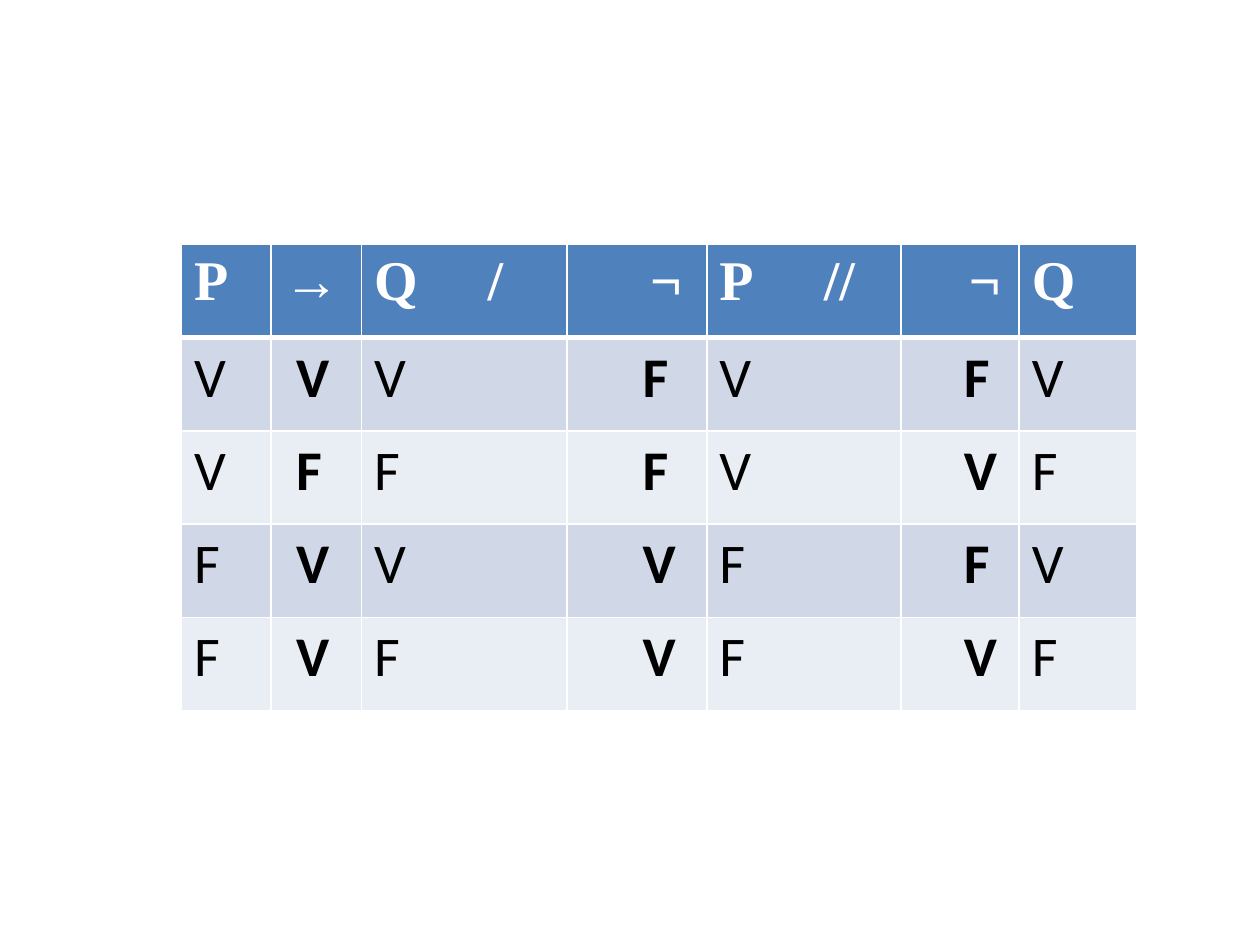
from lxml import etree
from pptx import Presentation
from pptx.dml.color import RGBColor
from pptx.oxml import ns
from pptx.util import Inches, Pt

COLORS = {
    "header": "4F81BD",
    "odd_row": "D0D8E8",
    "even_row": "E9EDF4",
    "light": "FFFFFF",
    "dark": "000000",
}
COLUMN_WIDTHS = [0.71, 0.72, 1.63, 1.11, 1.54, 0.94, 0.93]
ROW_HEIGHT = 0.74
HEADINGS = ["P", "→", "Q\t/", "¬", "P\t//", "¬", "Q"]
TRUTH_ROWS = ["VVVFVFV", "VFFFVVF", "FVVVFFV", "FVFVFVF"]
CONNECTIVE_COLUMNS = {1, 3, 5}
HEADING_MARGINS = [0.1, 0.1, 0.1, 0.66, 0.1, 0.54, 0.1]
VALUE_MARGINS = [0.1, 0.2, 0.1, 0.6, 0.1, 0.5, 0.1]
SEPARATOR_TABS = {2: 0.9, 4: 0.83}


def set_borders(cell, top=1, bottom=1):
    properties = cell._tc.get_or_add_tcPr()
    widths = {"a:lnL": 1, "a:lnR": 1, "a:lnT": top, "a:lnB": bottom}
    for position, (tag, width) in enumerate(widths.items()):
        line = etree.Element(ns.qn(tag), w=str(Pt(width)))
        fill = etree.SubElement(line, ns.qn("a:solidFill"))
        etree.SubElement(fill, ns.qn("a:srgbClr"), val=COLORS["light"])
        properties.insert(position, line)


def set_tab(paragraph, position):
    tabs = etree.SubElement(paragraph._p.get_or_add_pPr(), ns.qn("a:tabLst"))
    etree.SubElement(tabs, ns.qn("a:tab"), pos=str(Inches(position)), algn="l")


def fill_cell(cell, wording, fill, color, font, bold, margin):
    cell.fill.solid()
    cell.fill.fore_color.rgb = RGBColor.from_string(COLORS[fill])
    cell.margin_left = Inches(margin)
    run = cell.text_frame.paragraphs[0].add_run()
    run.text = wording
    run.font.name = font
    run.font.size = Pt(32)
    run.font.bold = bold
    run.font.color.rgb = RGBColor.from_string(COLORS[color])


def add_headings(table):
    for column, heading in enumerate(HEADINGS):
        cell = table.cell(0, column)
        fill_cell(cell, heading, "header", "light", "Times New Roman", True,
                  HEADING_MARGINS[column])
        set_borders(cell, bottom=3)
        if column in SEPARATOR_TABS:
            set_tab(cell.text_frame.paragraphs[0], SEPARATOR_TABS[column])


def add_truth_values(table):
    for row, values in enumerate(TRUTH_ROWS, start=1):
        fill = "odd_row" if row % 2 else "even_row"
        for column, value in enumerate(values):
            cell = table.cell(row, column)
            fill_cell(cell, value, fill, "dark", "Calibri",
                      column in CONNECTIVE_COLUMNS, VALUE_MARGINS[column])
            set_borders(cell, top=3 if row == 1 else 1)


def add_truth_table(slide):
    row_count = len(TRUTH_ROWS) + 1
    table = slide.shapes.add_table(
        row_count, len(HEADINGS), Inches(1.44), Inches(1.94),
        Inches(sum(COLUMN_WIDTHS)), Inches(ROW_HEIGHT * row_count)).table
    table.horz_banding = False
    for column, width in zip(table.columns, COLUMN_WIDTHS):
        column.width = Inches(width)
    for row in table.rows:
        row.height = Inches(ROW_HEIGHT)
    add_headings(table)
    add_truth_values(table)


def main():
    presentation = Presentation()
    presentation.slide_width = Inches(10)
    presentation.slide_height = Inches(7.5)
    slide = presentation.slides.add_slide(presentation.slide_layouts[6])
    add_truth_table(slide)
    presentation.save("out.pptx")


if __name__ == "__main__":
    main()
